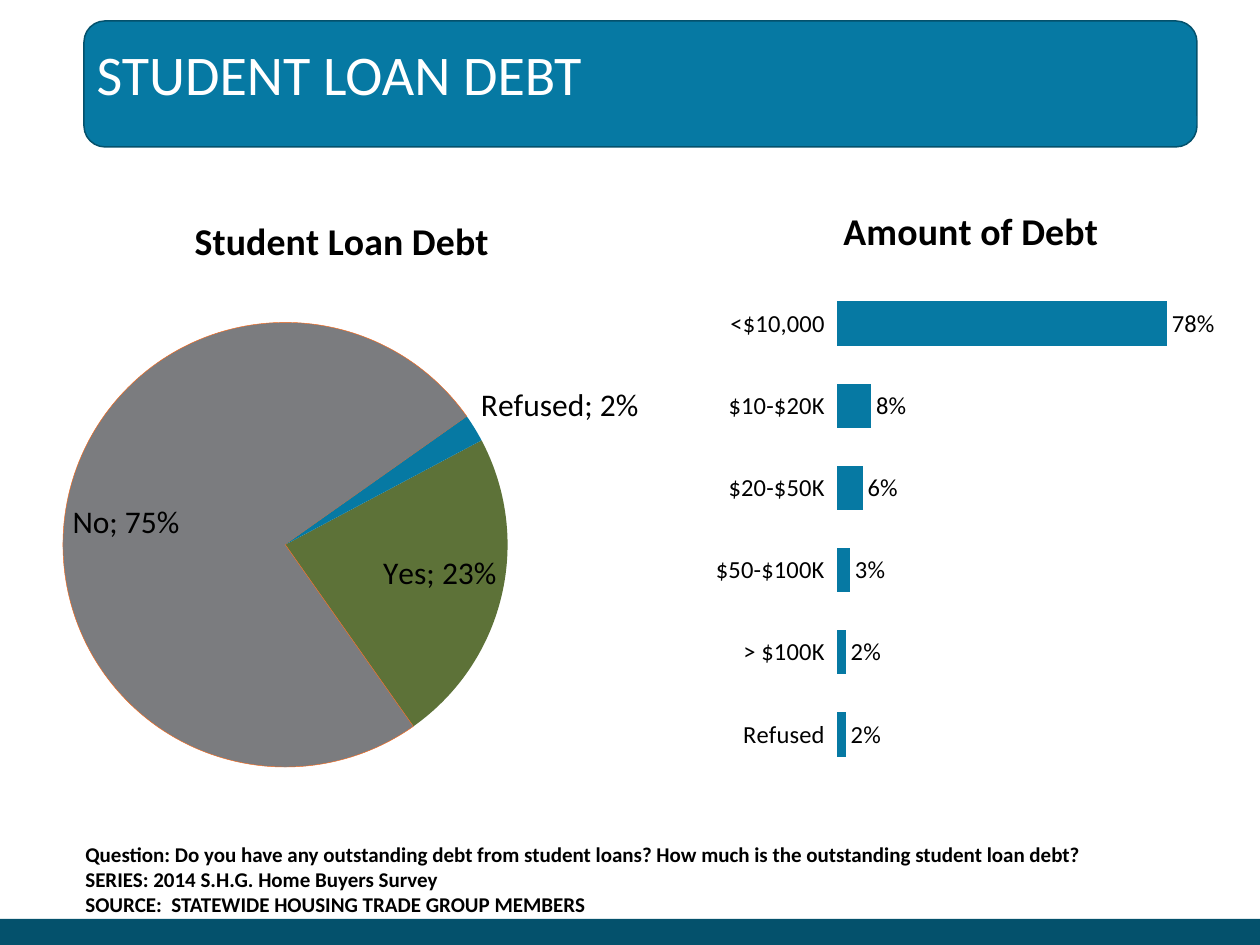
from lxml.etree import SubElement
from pptx import Presentation
from pptx.chart.data import CategoryChartData
from pptx.dml.color import RGBColor
from pptx.enum.chart import XL_CHART_TYPE, XL_LABEL_POSITION, XL_TICK_LABEL_POSITION, XL_TICK_MARK
from pptx.enum.shapes import MSO_SHAPE
from pptx.enum.text import MSO_ANCHOR, MSO_AUTO_SIZE, PP_ALIGN
from pptx.oxml.ns import qn
from pptx.util import Emu, Pt

BLUE = RGBColor(0x06, 0x79, 0xA3)
NAVY = RGBColor(0x04, 0x51, 0x6C)
GREEN = RGBColor(0x5D, 0x72, 0x38)
GRAY = RGBColor(0x7B, 0x7C, 0x7F)
ORANGE = RGBColor(0xF9, 0x6A, 0x1B)
WHITE = RGBColor(0xFF, 0xFF, 0xFF)
BLACK = RGBColor(0, 0, 0)
FONT = "Calibri"

DEBT_SHARES = {"Yes": 0.23, "No": 0.75, "Refused": 0.02}
DEBT_AMOUNTS = {"<$10,000": 0.78, "$10-$20K": 0.08, "$20-$50K": 0.06,
                "$50-$100K": 0.03, "> $100K": 0.02, "Refused": 0.02}
NOTES = [
    "Question: Do you have any outstanding debt from student loans? "
    "How much is the outstanding student loan debt?",
    "SERIES: 2014 S.H.G. Home Buyers Survey",
    "SOURCE:  STATEWIDE HOUSING TRADE GROUP MEMBERS",
]


def px(*lengths):
    """Turn pixels (126 to the inch) into EMU."""
    return [Emu(round(length * 914400 / 126)) for length in lengths]


def style_font(font, size, color, bold=False):
    font.name = FONT
    font.size = Pt(size)
    font.bold = bold
    font.color.rgb = color


def add_panel(page, preset, place, fill, line=None):
    panel = page.shapes.add_shape(preset, *px(*place))
    panel.shadow.inherit = False
    panel.fill.solid()
    panel.fill.fore_color.rgb = fill
    if line is None:
        panel.line.fill.background()
    else:
        panel.line.color.rgb = line
        panel.line.width = Pt(0.85)


def set_title(page, text, place):
    title = page.shapes.title
    title.left, title.top, title.width, title.height = px(*place)
    # Bring the title in front of its banner
    page.shapes._spTree.append(title._element)
    frame = title.text_frame
    frame.text = text
    frame.vertical_anchor = MSO_ANCHOR.MIDDLE
    frame.paragraphs[0].alignment = PP_ALIGN.LEFT
    style_font(frame.paragraphs[0].font, 32, WHITE)


def add_notes(page, lines, place):
    frame = page.shapes.add_textbox(*px(*place)).text_frame
    frame.word_wrap = False
    frame.auto_size = MSO_AUTO_SIZE.SHAPE_TO_FIT_TEXT
    frame.text = "\n".join(lines)
    for para in frame.paragraphs:
        style_font(para.font, 12, BLACK, bold=True)


def place_plot(chart, left, top, width, height):
    """Fix the inner plot area, in fractions of the chart."""
    plot_area = chart._chartSpace.chart.plotArea
    layout = plot_area.find(qn("c:layout"))
    if layout is None:
        layout = SubElement(plot_area, qn("c:layout"))
        plot_area.insert(0, layout)
    manual = SubElement(layout, qn("c:manualLayout"))
    settings = {"layoutTarget": "inner", "xMode": "edge", "yMode": "edge",
                "x": left, "y": top, "w": width, "h": height}
    for name, value in settings.items():
        SubElement(manual, qn(f"c:{name}")).set("val", str(value))


def add_chart(page, kind, name, values, place, size, plot_place):
    data = CategoryChartData(number_format="0%")
    data.categories = list(values)
    data.add_series(name, list(values.values()))
    chart = page.shapes.add_chart(kind, *px(*place), data).chart
    style_font(chart.font, size, BLACK)
    chart.has_legend = False
    chart.has_title = True
    chart.chart_title.text_frame.text = name
    style_font(chart.chart_title.text_frame.paragraphs[0].font, 21.6, BLACK, bold=True)
    place_plot(chart, *plot_place)

    plot = chart.plots[0]
    plot.has_data_labels = True
    labels = plot.data_labels
    labels.show_value = True
    labels.number_format = "0%"
    labels.number_format_is_linked = False
    style_font(labels.font, size, BLACK)
    return chart


def add_share_pie(page):
    chart = add_chart(page, XL_CHART_TYPE.PIE, "Student Loan Debt", DEBT_SHARES,
                      (-94, 189, 872, 598), 18, (0.18, 0.22, 0.51, 0.75))
    plot = chart.plots[0]
    plot.vary_by_categories = True
    plot.data_labels.show_category_name = True
    plot.data_labels.position = XL_LABEL_POSITION.BEST_FIT
    pie = plot._element
    angle = pie.find(qn("c:firstSliceAng"))
    if angle is None:
        angle = SubElement(pie, qn("c:firstSliceAng"))
    angle.set("val", "62")
    points = plot.series[0].points
    for index, color in enumerate((GREEN, GRAY, BLUE)):
        points[index].format.fill.solid()
        points[index].format.fill.fore_color.rgb = color
    points[1].format.line.color.rgb = ORANGE
    points[1].format.line.width = Pt(0.25)


def add_amount_bars(page):
    chart = add_chart(page, XL_CHART_TYPE.BAR_CLUSTERED, "Amount of Debt", DEBT_AMOUNTS,
                      (714, 179, 514, 609), 14, (0.24, 0.17, 0.74, 0.81))
    plot = chart.plots[0]
    plot.vary_by_categories = False
    plot.gap_width = 86
    plot.data_labels.position = XL_LABEL_POSITION.OUTSIDE_END
    plot.series[0].format.fill.solid()
    plot.series[0].format.fill.fore_color.rgb = BLUE

    categories = chart.category_axis
    categories.reverse_order = True
    categories.major_tick_mark = XL_TICK_MARK.NONE
    categories.tick_label_position = XL_TICK_LABEL_POSITION.LOW
    categories.format.line.fill.background()
    amounts = chart.value_axis
    amounts.minimum_scale, amounts.maximum_scale = 0, 0.9
    amounts.has_major_gridlines = False
    amounts.visible = False


def main():
    deck = Presentation()
    deck.slide_width, deck.slide_height = px(1260, 945)
    page = deck.slides.add_slide(deck.slide_layouts[5])

    # Footer band and title banner
    add_panel(page, MSO_SHAPE.RECTANGLE, (0, 919, 1260, 26), NAVY)
    add_panel(page, MSO_SHAPE.FLOWCHART_ALTERNATE_PROCESS, (84, 21, 1113, 126), BLUE, NAVY)
    set_title(page, "STUDENT LOAN DEBT", (84, 31, 1113, 84))

    # Charts
    add_share_pie(page)
    add_amount_bars(page)

    # Survey question and source
    add_notes(page, NOTES, (73, 835, 1072, 89))

    deck.save("out.pptx")


if __name__ == "__main__":
    main()
